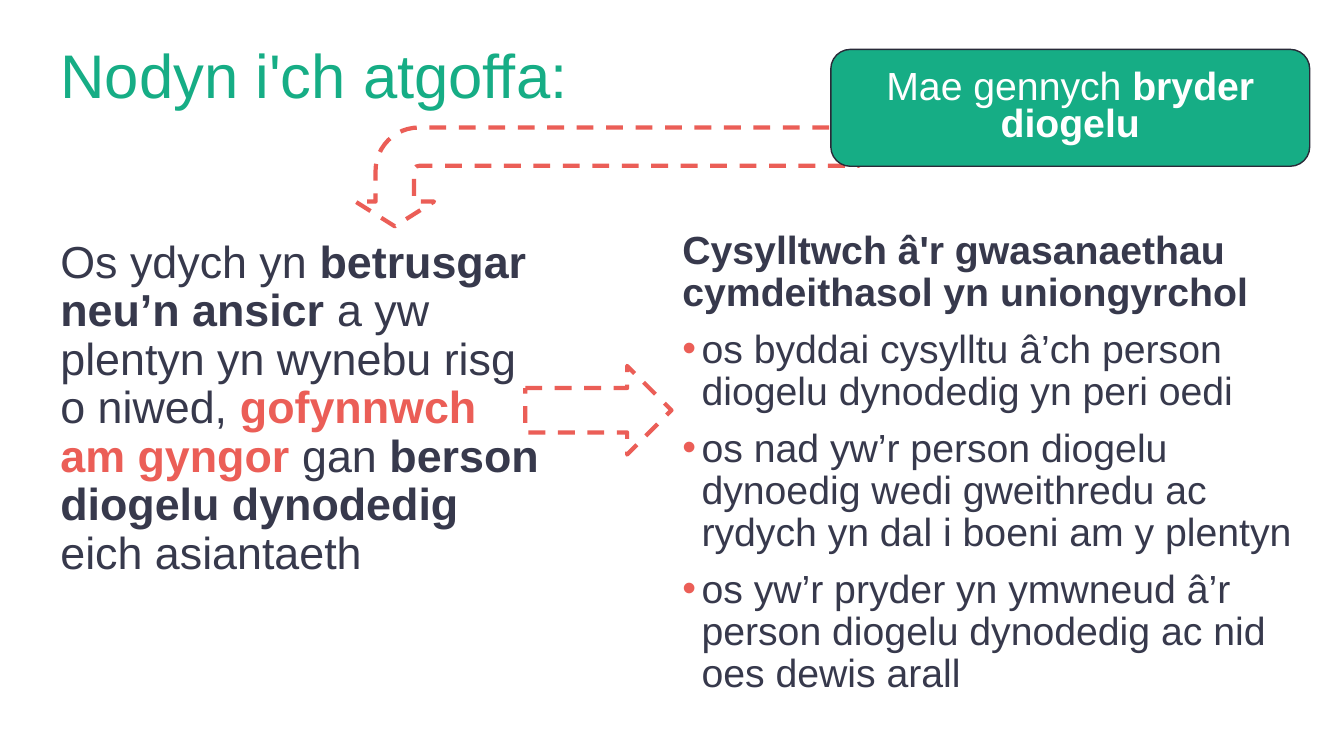
from pptx import Presentation
from pptx.dml.color import RGBColor
from pptx.enum.dml import MSO_LINE
from pptx.enum.shapes import MSO_SHAPE
from pptx.enum.text import MSO_ANCHOR, MSO_AUTO_SIZE, PP_ALIGN
from pptx.oxml.ns import qn
from pptx.util import Inches, Pt
from lxml.etree import SubElement

GREEN, RED, NAVY, WHITE = "16AD85", "EB5E57", "37394C", "FFFFFF"


def color(code):
    return RGBColor.from_string(code)


def write(par, text, size=28, tint=NAVY, bold=False, gap=0.9, align=PP_ALIGN.LEFT):
    par.line_spacing = gap
    par.alignment = align
    run = par.add_run()
    run.text = text
    run.font.name = "Arial"
    run.font.size = Pt(size)
    run.font.bold = bold
    run.font.color.rgb = color(tint)


deck = Presentation()
deck.slide_width, deck.slide_height = Inches(13.33), Inches(7.5)
slide = deck.slides.add_slide(deck.slide_layouts[5])
shapes = slide.shapes

# Title
title = shapes.title
title.left, title.top = Inches(0.5), Inches(0.4)
title.width, title.height = Inches(7.59), Inches(0.75)
frame = title.text_frame
frame.auto_size = MSO_AUTO_SIZE.NONE
frame.vertical_anchor = MSO_ANCHOR.MIDDLE
write(frame.paragraphs[0], "Nodyn i'ch atgoffa:", size=44, tint=GREEN)

# Advice on the left
advice = shapes.add_textbox(Inches(0.5), Inches(2.33), Inches(4.99), Inches(4.36))
advice.text_frame.word_wrap = True
for text, tint, bold in [
    ("Os ydych yn", NAVY, False),
    (" betrusgar neu’n ansicr ", NAVY, True),
    ("a yw plentyn yn wynebu risg o niwed, ", NAVY, False),
    ("gofynnwch am gyngor ", RED, True),
    ("gan ", NAVY, False),
    ("berson diogelu dynodedig ", NAVY, True),
    ("eich asiantaeth", NAVY, False),
]:
    write(advice.text_frame.paragraphs[0], text, size=32, tint=tint, bold=bold)

# Dashed arrows
bent = shapes.add_shape(MSO_SHAPE.BENT_ARROW, Inches(5.53), Inches(-0.74), Inches(0.98), Inches(4.99))
bent.rotation = 270
bent.element.spPr.find(qn("a:xfrm")).set("flipH", "1")
for i, value in enumerate([0.388, 0.398, 0.25, 0.438]):
    bent.adjustments[i] = value
right = shapes.add_shape(MSO_SHAPE.RIGHT_ARROW, Inches(5.21), Inches(3.63), Inches(1.45), Inches(0.88))
for arrow in (bent, right):
    arrow.shadow.inherit = False
    arrow.fill.solid()
    arrow.fill.fore_color.rgb = color(WHITE)
    arrow.line.color.rgb = color(RED)
    arrow.line.width = Pt(3)
    arrow.line.dash_style = MSO_LINE.DASH

# Concern box
box = shapes.add_shape(MSO_SHAPE.ROUNDED_RECTANGLE, Inches(8.24), Inches(0.49), Inches(4.75), Inches(1.16))
box.shadow.inherit = False
box.fill.solid()
box.fill.fore_color.rgb = color(GREEN)
box.line.color.rgb = color("292A38")
box.line.width = Pt(1)
frame = box.text_frame
frame.word_wrap = True
frame.vertical_anchor = MSO_ANCHOR.MIDDLE
for text, bold in [("Mae gennych ", False), ("bryder diogelu", True)]:
    write(frame.paragraphs[0], text, tint=WHITE, bold=bold, gap=0.8, align=PP_ALIGN.CENTER)

# Contact list on the right
steps = shapes.add_textbox(Inches(6.67), Inches(2.24), Inches(6.47), Inches(4.36))
frame = steps.text_frame
frame.word_wrap = True
write(frame.paragraphs[0], "Cysylltwch â'r gwasanaethau cymdeithasol yn uniongyrchol", bold=True)
for text in [
    "os byddai cysylltu â’ch person diogelu dynodedig yn peri oedi",
    "os nad yw’r person diogelu dynoedig wedi gweithredu ac rydych yn dal i boeni am y plentyn",
    "os yw’r pryder yn ymwneud â’r person diogelu dynodedig ac nid oes dewis arall",
]:
    par = frame.add_paragraph()
    write(par, text)
    par.space_before = Pt(10)
    props = par._p.get_or_add_pPr()
    props.set("marL", str(Inches(0.19)))
    props.set("indent", str(-Inches(0.19)))
    tone = SubElement(props, qn("a:buClr"))
    SubElement(tone, qn("a:srgbClr"), val=RED)
    SubElement(props, qn("a:buFont"), typeface="Arial")
    SubElement(props, qn("a:buChar"), char="•")

# The right arrow lies in front of the list
shapes._spTree.append(right.element)

deck.save("out.pptx")
